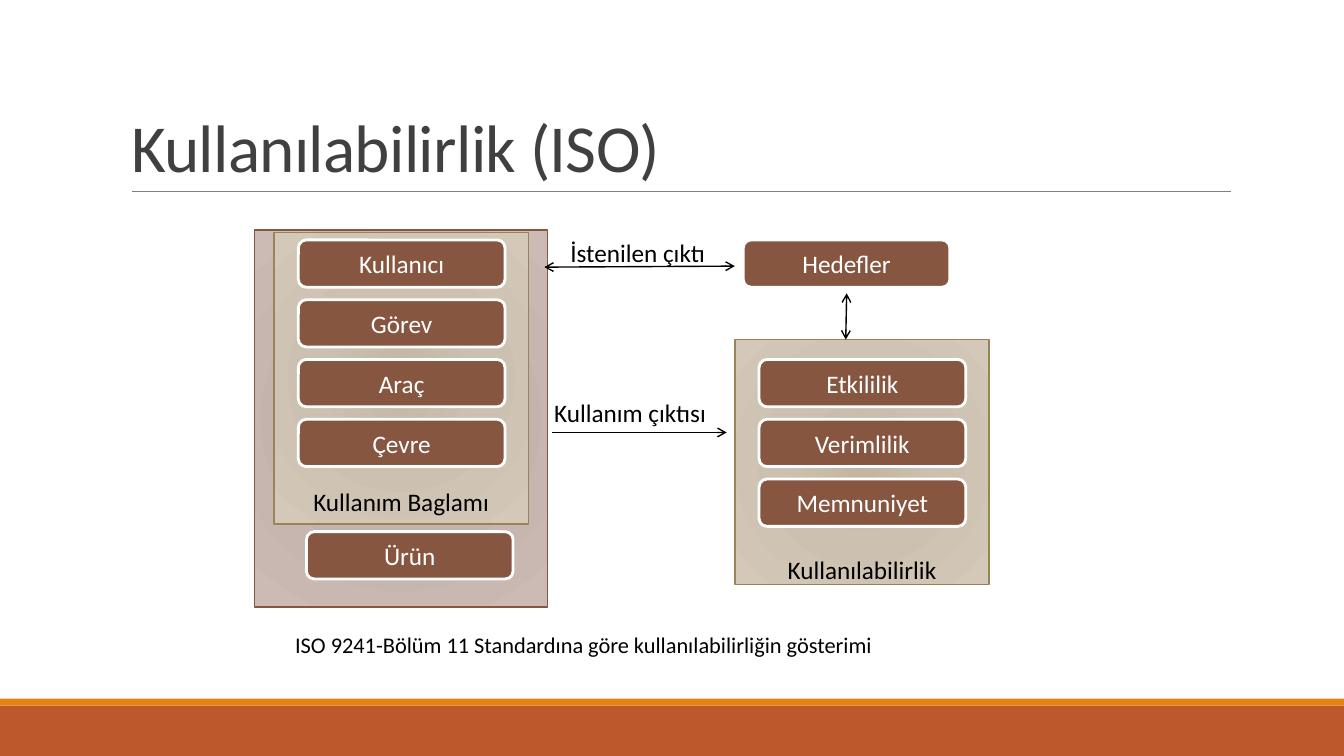
"""Build the slide on usability according to the ISO standard."""
import pptx
import pptx.dml.color
import pptx.enum.shapes
import pptx.enum.text
import pptx.oxml
import pptx.oxml.ns
import pptx.util

Pt = pptx.util.Pt
SHAPES = pptx.enum.shapes.MSO_SHAPE
ALIGN = pptx.enum.text.PP_ALIGN
ANCHOR = pptx.enum.text.MSO_ANCHOR
COLORS = {
    "rust": "BD582C", "orange": "E48312", "gray": "808080", "title": "404040",
    "brown": "865640", "gold": "9B8357", "white": "FFFFFF", "black": "000000",
}
RGB = {name: pptx.dml.color.RGBColor.from_string(value) for name, value in COLORS.items()}
GRADIENTS = {
    "rose": {0: "B9A49E", 45: "C4B2AD", 100: "CCBAB5"},
    "sand": {0: "C2B5A2", 45: "CCC1B1", 100: "D4C8B8"},
}


def write(shape, text, size, color, align, anchor, bottom=3.6):
    """Put one formatted paragraph into a shape."""
    frame = shape.text_frame
    frame.text = text
    frame_format = {"word_wrap": True, "vertical_anchor": anchor, "margin_bottom": Pt(bottom)}
    for key, value in frame_format.items():
        setattr(frame, key, value)
    paragraph = frame.paragraphs[0]
    paragraph.alignment = align
    font = paragraph.runs[0].font
    for key, value in {"name": "Calibri", "size": Pt(size), "bold": False}.items():
        setattr(font, key, value)
    font.color.rgb = RGB[color]
    return paragraph


def add_box(kind, place, line, width, fill=None):
    """Add a shape with an outline and, if given, a solid fill."""
    shape = slide.shapes.add_shape(kind, *map(Pt, place))
    shape.shadow.inherit = False
    if fill:
        shape.fill.solid()
        shape.fill.fore_color.rgb = RGB[fill]
    if line:
        shape.line.color.rgb = RGB[line]
        shape.line.width = Pt(width)
    else:
        shape.line.fill.background()
    return shape


presentation = pptx.Presentation()
presentation.slide_width, presentation.slide_height = Pt(960), Pt(540)
slide = presentation.slides.add_slide(presentation.slide_layouts[5])

add_box(SHAPES.RECTANGLE, (0, 504, 960, 36), None, 0, "rust")
add_box(SHAPES.RECTANGLE, (0, 499, 960, 5), None, 0, "orange")

title = slide.shapes.title
title_place = {"left": 86.4, "top": 22.3, "width": 792, "height": 114.5}
for side, length in title_place.items():
    setattr(title, side, Pt(length))
heading = write(title, "Kullanılabilirlik (ISO)", 48, "title", ALIGN.LEFT, ANCHOR.BOTTOM)
heading.line_spacing = 0.85
heading.runs[0].font._element.set("spc", "-50")

panels = [
    ("", (181.6, 164.2, 209.5, 269.3), "rose", "brown", 0),
    ("Kullanım Baglamı", (195.8, 166.3, 181.6, 208), "sand", "gold", 5.5),
    ("Kullanılabilirlik", (525, 242.6, 181.5, 175), "sand", "gold", 0),
]
for name, place, gradient, outline, bottom in panels:
    panel = add_box(SHAPES.RECTANGLE, place, outline, 1)
    stops = "".join(
        f'<a:gs pos="{position * 1000}"><a:srgbClr val="{value}"/></a:gs>'
        for position, value in GRADIENTS[gradient].items()
    )
    panel._element.spPr.insert(2, pptx.oxml.parse_xml(
        f'<a:gradFill {pptx.oxml.ns.nsdecls("a")} rotWithShape="1"><a:gsLst>{stops}</a:gsLst>'
        '<a:path path="circle"><a:fillToRect l="100000" t="100000" r="100000" b="100000"/>'
        '</a:path></a:gradFill>'
    ))
    if name:
        write(panel, name, 18, "black", ALIGN.CENTER, ANCHOR.BOTTOM, bottom)

first_row, row_pitch = 171.4, 42.7
factors = [
    (213.1, 0, ["Kullanıcı", "Görev", "Araç", "Çevre"]),
    (218.9, 2.44, ["Ürün"]),
    (530.9, 0, ["Hedefler"]),
    (542.2, 2, ["Etkililik", "Verimlilik", "Memnuniyet"]),
]
factors[1] = (218.9, 4.88, ["Ürün"])
for left, start, names in factors:
    for row, name in enumerate(names, 0):
        top = first_row + (start + row) * row_pitch
        factor = add_box(SHAPES.ROUNDED_RECTANGLE, (left, top, 147.6, 33.8), "white", 2, "brown")
        write(factor, name, 18, "white", ALIGN.CENTER, ANCHOR.MIDDLE)

lines = [
    ((94.3, 136.8, 879.1, 136.8), "gray", 0.5, []),
    ((388.8, 190.8, 524.9, 190.1), "black", 1, ["headEnd", "tailEnd"]),
    ((604.8, 209.5, 604.1, 242.6), "black", 1, ["headEnd", "tailEnd"]),
    ((394.6, 308.9, 519.1, 308.9), "black", 1, ["tailEnd"]),
]
for ends, color, width, arrowheads in lines:
    link = slide.shapes.add_connector(pptx.enum.shapes.MSO_CONNECTOR.STRAIGHT, *map(Pt, ends))
    link.line.color.rgb = RGB[color]
    link.line.width = Pt(width)
    for arrowhead in arrowheads:
        link.line._get_or_add_ln().append(pptx.oxml.parse_xml(
            f'<a:{arrowhead} {pptx.oxml.ns.nsdecls("a")} type="arrow"/>'
        ))
    link._element.spPr.append(pptx.oxml.parse_xml(f'<a:effectLst {pptx.oxml.ns.nsdecls("a")}/>'))

captions = [
    ("ISO 9241-Bölüm 11 Standardına göre kullanılabilirliğin gösterimi",
     (190.1, 447.1, 453.6, 26.6), 16, ALIGN.CENTER, ANCHOR.MIDDLE),
    ("İstenilen çıktı", (400.3, 166.3, 118.8, 28.8), 18, ALIGN.LEFT, ANCHOR.TOP),
    ("Kullanım çıktısı", (388.8, 280.1, 124.6, 28.8), 18, ALIGN.LEFT, ANCHOR.TOP),
]
for text, place, size, align, anchor in captions:
    caption = slide.shapes.add_textbox(*map(Pt, place))
    write(caption, text, size, "black", align, anchor)

presentation.save("out.pptx")
